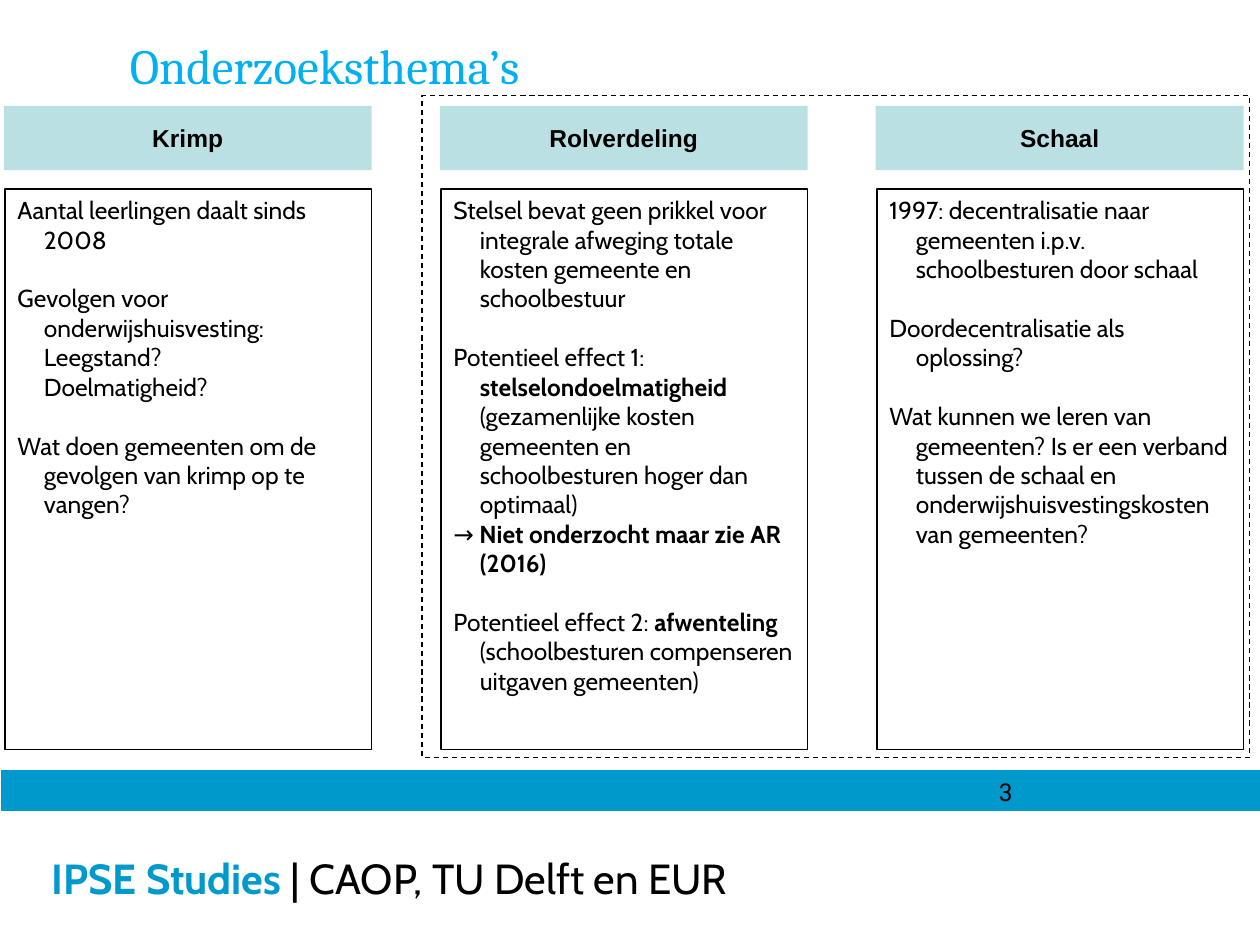
"""Build the slide on the three research themes of school housing."""
import pptx
import pptx.dml.color
import pptx.enum.dml
import pptx.enum.shapes
import pptx.enum.text
import pptx.util

Inches = pptx.util.Inches
Pt = pptx.util.Pt
Align = pptx.enum.text.PP_ALIGN
Anchor = pptx.enum.text.MSO_ANCHOR

THEMES = {
    "Krimp": [
        ["Aantal leerlingen daalt sinds 2008"],
        ["Gevolgen voor onderwijshuisvesting: Leegstand?\nDoelmatigheid?"],
        ["Wat doen gemeenten om de gevolgen van krimp op te vangen?"],
    ],
    "Rolverdeling": [
        ["Stelsel bevat geen prikkel voor integrale afweging totale kosten "
         "gemeente en schoolbestuur"],
        ["Potentieel effect 1: **stelselondoelmatigheid** (gezamenlijke kosten "
         "gemeenten en schoolbesturen hoger dan optimaal)",
         "→ **Niet onderzocht maar zie AR (2016)**"],
        ["Potentieel effect 2: **afwenteling **(schoolbesturen compenseren "
         "uitgaven gemeenten)"],
    ],
    "Schaal": [
        ["1997: decentralisatie naar gemeenten i.p.v. schoolbesturen door schaal"],
        ["Doordecentralisatie als oplossing?"],
        ["Wat kunnen we leren van gemeenten? Is er een verband tussen de schaal "
         "en onderwijshuisvestingskosten van gemeenten?"],
    ],
}


def rgb(hex_colour):
    """Turn a hex string into a colour."""
    return pptx.dml.color.RGBColor.from_string(hex_colour)


def apply_format(target, values):
    """Set every attribute in values on target."""
    for attribute, value in values.items():
        setattr(target, attribute, value)


class ThemeSlide:
    """Hold the style and the current slide."""

    black, white, blue = "000000", "FFFFFF", "0099CC"
    pale, sky = "BBE0E3", "00B0F0"
    body = {"name": "Cabin", "size": Pt(14), "bold": False}
    heading = {"name": "Arial", "size": Pt(14), "bold": True}
    number = {"name": "Roboto", "size": Pt(14), "bold": False}
    footer = {"name": "Cabin", "size": Pt(24), "bold": False}
    title_font = {"name": "Cambria", "size": Pt(28), "bold": False}
    hanging = 0.21
    block_gap = Pt(16.8)

    def __init__(self, deck):
        """Add a title-only slide to the deck."""
        self.slide = deck.slides.add_slide(deck.slide_layouts[5])

    def add_text(self, paragraph, text, font, colour=black):
        """Add text to a paragraph, with bold parts between double asterisks."""
        for part_index, part in enumerate(text.split("**")):
            for line_index, line in enumerate(part.split("\n")):
                if line_index:
                    paragraph.add_line_break()
                if line:
                    run = paragraph.add_run()
                    run.text = line
                    apply_format(run.font, font)
                    run.font.bold = font["bold"] or part_index % 2 == 1
                    run.font.color.rgb = rgb(colour)

    def indent(self, paragraph, margin, first_line):
        """Set the left margin and first-line indent of a paragraph."""
        properties = paragraph._p.get_or_add_pPr()
        properties.set("marL", str(Inches(margin)))
        properties.set("indent", str(Inches(first_line)))

    def title(self, text, box):
        """Move and format the title placeholder."""
        heading = self.slide.shapes.title
        left, top, width, height = map(Inches, box)
        apply_format(heading, {"left": left, "top": top, "width": width, "height": height})
        apply_format(heading.text_frame, {
            "vertical_anchor": Anchor.TOP, "word_wrap": True,
            "auto_size": pptx.enum.text.MSO_AUTO_SIZE.NONE})
        paragraph = heading.text_frame.paragraphs[0]
        paragraph.alignment = Align.LEFT
        self.indent(paragraph, 0.5, 0)
        self.add_text(paragraph, text, self.title_font, self.sky)

    def rectangle(self, box, fill=None, line=None, dashed=False):
        """Add a rectangle and return it."""
        shape = self.slide.shapes.add_shape(
            pptx.enum.shapes.MSO_SHAPE.RECTANGLE, *map(Inches, box))
        shape.shadow.inherit = False
        if fill:
            shape.fill.solid()
            shape.fill.fore_color.rgb = rgb(fill)
        else:
            shape.fill.background()
        if line:
            shape.line.color.rgb = rgb(line)
            shape.line.width = Pt(0.75)
        else:
            shape.line.fill.background()
        if dashed:
            shape.line.dash_style = pptx.enum.dml.MSO_LINE.DASH
        return shape

    def header(self, text, box):
        """Add the coloured heading of a theme."""
        frame = self.rectangle(box, self.pale).text_frame
        apply_format(frame, {"vertical_anchor": Anchor.MIDDLE, "word_wrap": True})
        paragraph = frame.paragraphs[0]
        paragraph.alignment = Align.CENTER
        self.indent(paragraph, self.hanging, -self.hanging)
        self.add_text(paragraph, text, self.heading)

    def panel(self, blocks, box):
        """Add the outlined panel with the text blocks of a theme."""
        frame = self.rectangle(box, self.white, self.black).text_frame
        apply_format(frame, {"vertical_anchor": Anchor.TOP, "word_wrap": True})
        paragraph = None
        for block in blocks:
            for position, text in enumerate(block):
                first = paragraph is None
                paragraph = frame.paragraphs[0] if first else frame.add_paragraph()
                paragraph.alignment = Align.LEFT
                if position == 0 and not first:
                    paragraph.space_before = self.block_gap
                self.indent(paragraph, self.hanging, -self.hanging)
                self.add_text(paragraph, text, self.body)

    def footer_band(self, institute, partners):
        """Add the white footer and the blue bar above it."""
        frame = self.rectangle((-0.01, 6.44, 10.01, 1.06), self.white).text_frame
        apply_format(frame, {"vertical_anchor": Anchor.MIDDLE, "word_wrap": True,
                             "margin_left": Inches(0.42)})
        paragraph = frame.paragraphs[0]
        paragraph.alignment = Align.LEFT
        self.add_text(paragraph, f"**{institute}**", self.footer, self.blue)
        self.add_text(paragraph, partners, self.footer)
        self.rectangle((0.01, 6.12, 10, 0.31), self.blue, self.blue)

    def page_number(self, text, box):
        """Add the page number on the blue bar."""
        frame = self.slide.shapes.add_textbox(*map(Inches, box)).text_frame
        frame.word_wrap = True
        self.add_text(frame.paragraphs[0], text, self.number)


def main():
    """Build and save the presentation."""
    deck = pptx.Presentation()
    deck.slide_width, deck.slide_height = Inches(10), Inches(7.5)
    themes = ThemeSlide(deck)
    themes.footer_band("IPSE Studies", " | CAOP, TU Delft en EUR")
    themes.page_number("3", (7.83, 6.12, 2.08, 0.25))
    for column, (theme, blocks) in enumerate(THEMES.items()):
        left = 0.03 + column * 3.46
        themes.header(theme, (left, 0.84, 2.92, 0.51))
        themes.panel(blocks, (left + 0.01, 1.5, 2.91, 4.45))
    themes.title("Onderzoeksthema’s", (0.43, 0.23, 8.81, 0.57))
    themes.rectangle((3.35, 0.76, 6.57, 5.25), line=themes.black, dashed=True)
    deck.save("out.pptx")


if __name__ == "__main__":
    main()
